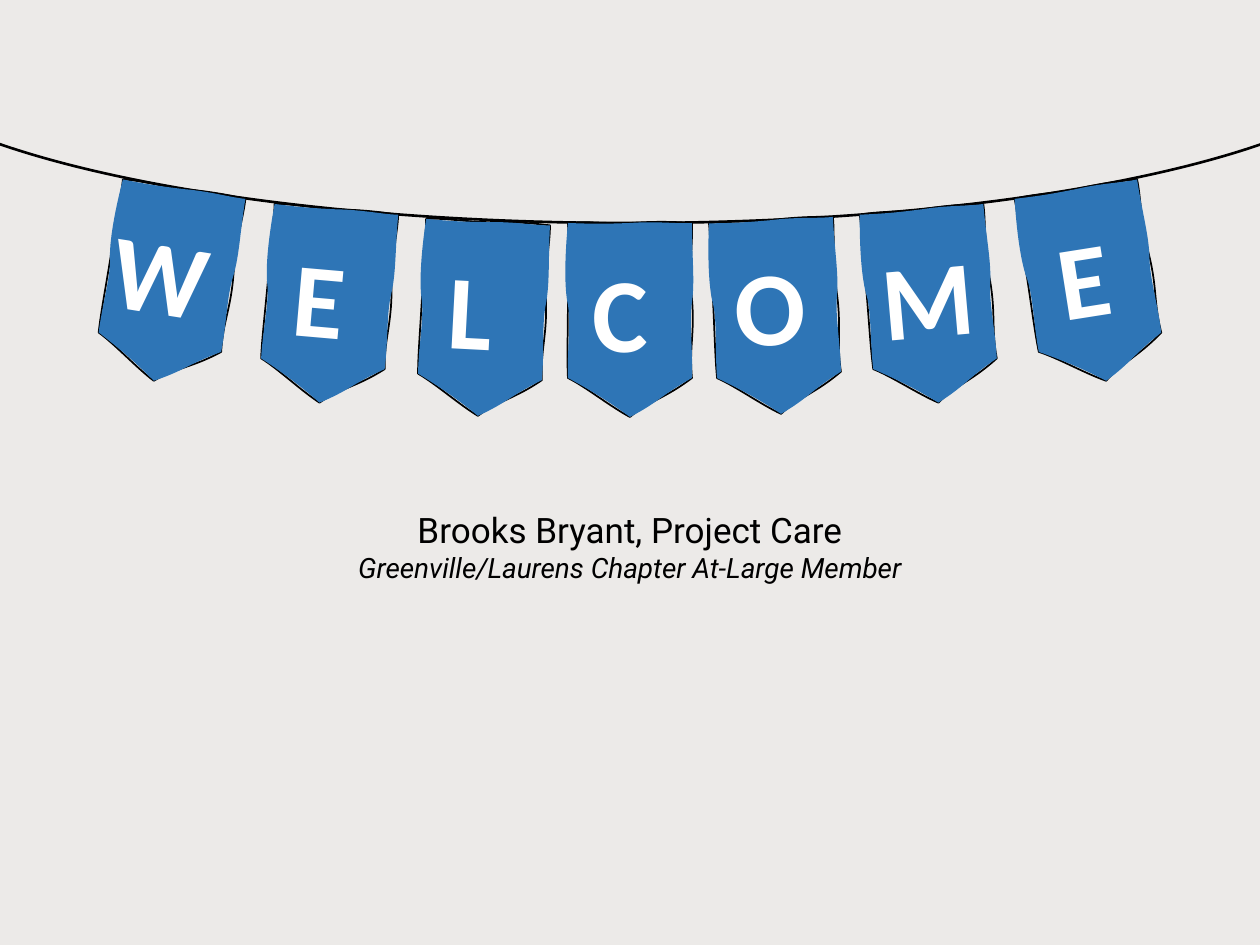
from lxml import etree
from pptx import Presentation
from pptx.dml.color import RGBColor
from pptx.enum.shapes import MSO_SHAPE
from pptx.enum.text import MSO_AUTO_SIZE, PP_ALIGN
from pptx.oxml.ns import qn
from pptx.util import Emu, Pt

PX = 914400 / 126
BLACK = RGBColor(0, 0, 0)
WHITE = RGBColor(255, 255, 255)
BLUE = RGBColor(0x2E, 0x75, 0xB6)
PAPER = RGBColor(0xEC, 0xEA, 0xE8)

WIDE, TALL = 124, 194
EDGE = [
    [(16, -2), (45, 1), (62, 0)],
    [(78, -1), (97, -2), (124, 0)],
    [(125, 18), (121, 40), (124, 76)],
    [(127, 111), (121, 125), (124, 155)],
    [(98, 175), (81, 178), (62, 194)],
    [(43, 184), (18, 164), (0, 155)],
    [(-1, 135), (0, 107), (0, 74)],
    [(-1, 40), (1, 16), (0, 0)],
]
CLOTH = [
    [(28, 1), (34, 1), (62, 0)],
    [(89, -2), (108, 1), (124, 0)],
    [(124, 35), (127, 58), (124, 79)],
    [(121, 100), (125, 125), (124, 155)],
    [(92, 173), (91, 179), (62, 194)],
    [(47, 183), (28, 170), (0, 155)],
    [(-1, 132), (3, 100), (0, 82)],
    [(-4, 64), (-3, 31), (0, 0)],
]

# letter, tilt, flag left and top, letter left, top and width
FLAGS = [
    ("W", 9, 107, 188, 101, 204, 132),
    ("E", 5, 266, 209, 282, 227, 93),
    ("L", 3, 421, 222, 436, 239, 93),
    ("C", 0, 568, 223, 580, 241, 101),
    ("O", -3, 714, 220, 722, 234, 110),
    ("M", -5, 868, 209, 869, 226, 118),
    ("E", -9, 1029, 188, 1045, 205, 93),
]


def px(num):
    return Emu(round(num * PX))


def add_points(node, tag, points):
    step = etree.SubElement(node, qn(tag))
    for x, y in points:
        etree.SubElement(step, qn("a:pt"), x=str(x), y=str(y))


def add_path(paths, curves, **flags):
    path = etree.SubElement(paths, qn("a:path"), w=str(WIDE), h=str(TALL), **flags)
    add_points(path, "a:moveTo", [(0, 0)])
    for curve in curves:
        add_points(path, "a:cubicBezTo", curve)
    etree.SubElement(path, qn("a:close"))


def add_flag(slide, left, top, tilt):
    pen = slide.shapes.build_freeform(0, 0, scale=PX)
    pen.add_line_segments([(WIDE, 0), (WIDE, TALL), (0, TALL)])
    flag = pen.convert_to_shape(px(left), px(top))
    paths = flag.element.find(".//" + qn("a:pathLst"))
    for old in list(paths):
        paths.remove(old)
    add_path(paths, EDGE, fill="none")
    add_path(paths, CLOTH, stroke="0")
    flag.rotation = tilt
    flag.shadow.inherit = False
    flag.fill.solid()
    flag.fill.fore_color.rgb = BLUE
    flag.line.color.rgb = BLACK
    flag.line.width = Pt(1)


def add_string(slide):
    arc = slide.shapes.add_shape(
        MSO_SHAPE.ARC, px(-135), px(-141), px(1531), px(364))
    arc.adjustments[0] = 113.527
    arc.adjustments[1] = 210.472
    arc.rotation = 180
    arc.shadow.inherit = False
    arc.fill.background()
    arc.line.color.rgb = BLACK
    arc.line.width = Pt(1.5)


def add_text(slide, box, text):
    shape = slide.shapes.add_textbox(*map(px, box))
    frame = shape.text_frame
    frame.word_wrap = True
    frame.auto_size = MSO_AUTO_SIZE.SHAPE_TO_FIT_TEXT
    frame.text = text
    return shape


def style(para, face, size, color, bold=False, italic=False):
    for run in para.runs:
        font = run.font
        font.name = face
        font.size = Pt(size)
        font.color.rgb = color
        font.bold = bold
        font.italic = italic


def add_letter(slide, letter, tilt, left, top, width):
    shape = add_text(slide, (left, top, width, 140), letter)
    shape.rotation = tilt
    style(shape.text_frame.paragraphs[0], "Calibri", 60, WHITE, bold=True)


def add_host(slide):
    shape = add_text(
        slide, (281, 481, 698, 111),
        "Brooks Bryant, Project Care\nGreenville/Laurens Chapter At-Large Member")
    name, role = shape.text_frame.paragraphs
    name.alignment = role.alignment = PP_ALIGN.CENTER
    name.line_spacing = 1.5
    style(name, "Roboto", 20, BLACK)
    style(role, "Roboto", 16, BLACK, italic=True)


def main():
    deck = Presentation()
    deck.slide_width, deck.slide_height = px(1260), px(945)
    slide = deck.slides.add_slide(deck.slide_layouts[6])
    slide.background.fill.solid()
    slide.background.fill.fore_color.rgb = PAPER
    add_host(slide)
    add_string(slide)
    for letter, tilt, left, top, *place in FLAGS:
        add_flag(slide, left, top, tilt)
        add_letter(slide, letter, tilt, *place)
    deck.save("out.pptx")


if __name__ == "__main__":
    main()
